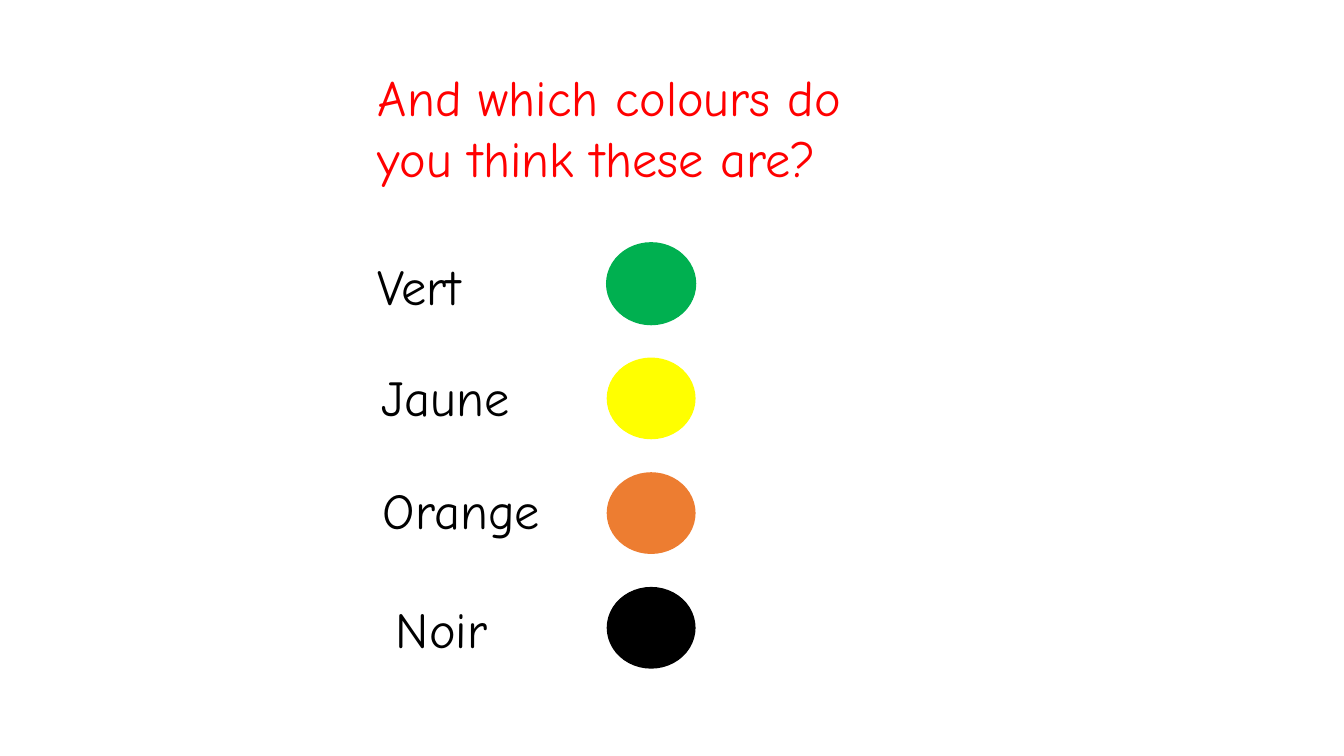
import pptx
import pptx.util
import pptx.dml.color
import pptx.enum.shapes
import pptx.enum.text
from pptx.util import Cm


def color(code):
    return pptx.dml.color.RGBColor.from_string(code)


class Deck:
    font = "Comic Neue"
    size = 36

    def __init__(self):
        self.prs = pptx.Presentation()
        self.prs.slide_width = Cm(33.87)
        self.prs.slide_height = Cm(19.05)
        # Layout 5 holds only a title
        self.slide = self.prs.slides.add_slide(self.prs.slide_layouts[5])

    def style(self, shape, text, code):
        frame = shape.text_frame
        frame.text = text
        frame.word_wrap = True
        frame.auto_size = pptx.enum.text.MSO_AUTO_SIZE.NONE
        frame.vertical_anchor = pptx.enum.text.MSO_ANCHOR.TOP
        para = frame.paragraphs[0]
        para.alignment = pptx.enum.text.PP_ALIGN.LEFT
        font = para.runs[0].font
        font.name = self.font
        font.size = pptx.util.Pt(self.size)
        font.color.rgb = color(code)

    def title(self, text, left, top, width, height, code):
        shape = self.slide.shapes.title
        shape.left, shape.top = Cm(left), Cm(top)
        shape.width, shape.height = Cm(width), Cm(height)
        self.style(shape, text, code)

    def label(self, text, left, top, width, height):
        box = self.slide.shapes.add_textbox(
            Cm(left), Cm(top), Cm(width), Cm(height))
        self.style(box, text, "000000")

    def dot(self, left, top, width, height, code, edge=None):
        oval = self.slide.shapes.add_shape(
            pptx.enum.shapes.MSO_SHAPE.OVAL,
            Cm(left), Cm(top), Cm(width), Cm(height))
        oval.shadow.inherit = False
        oval.fill.solid()
        oval.fill.fore_color.rgb = color(code)
        if edge:
            oval.line.color.rgb = color(code)
            oval.line.width = pptx.util.Pt(edge)
        else:
            oval.line.fill.background()


def main():
    deck = Deck()

    # Question
    deck.title("And which colours do you think these are?",
               9.27, 1.55, 13.72, 3.33, "FF0000")

    # Colour words: text, left, top, width, dot colour, dot outline
    rows = [
        ("Vert", 9.27, 6.3, 3.4, "00B050", 1),
        ("Jaune", 9.37, 9.09, 4.88, "FFFF00", None),
        ("Orange", 9.4, 11.94, 5.31, "ED7D31", None),
        ("Noir", 9.73, 14.94, 3.4, "000000", None),
    ]
    first, step = 6.12, 2.89
    for i, (word, left, top, width, code, edge) in enumerate(rows):
        deck.label(word, left, top, width, 1.8)
        deck.dot(15.29, first + i * step, 2.24, 2.06, code, edge)

    deck.prs.save("out.pptx")


if __name__ == "__main__":
    main()
